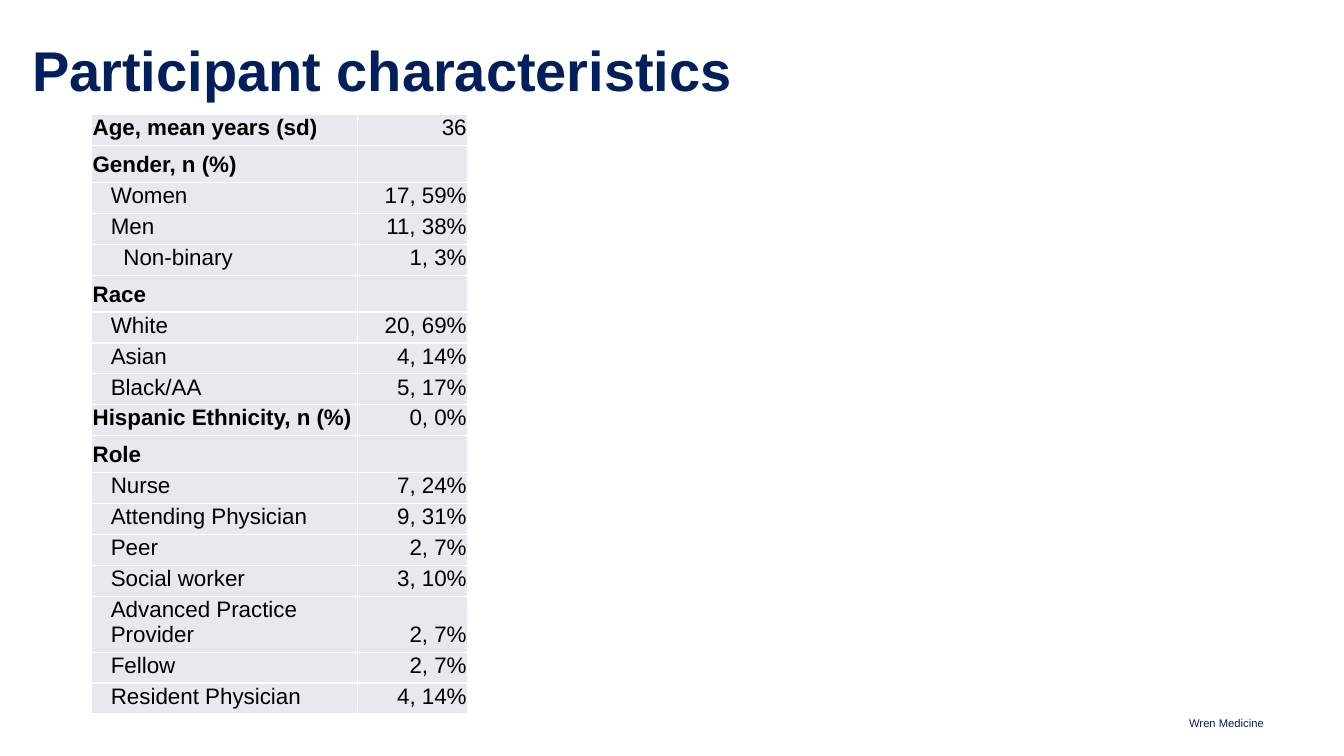
"""Build the participant characteristics slide with its table of demographics."""
from dataclasses import dataclass

from pptx import Presentation
from pptx.dml.color import RGBColor as RGB
from pptx.enum.text import MSO_ANCHOR as ANCHOR, PP_ALIGN as ALIGN
from pptx.util import Pt


@dataclass(frozen=True)
class Theme:
    font: str = "Arial"
    navy: RGB = RGB(0x01, 0x1F, 0x5B)
    text: RGB = RGB(0, 0, 0)
    cell: RGB = RGB(0xE7, 0xE9, 0xEF)
    title_size: int = 40
    table_size: int = 16
    footer_size: int = 8


def set_margins(box, left, top, right, bottom):
    box.margin_left, box.margin_top = Pt(left), Pt(top)
    box.margin_right, box.margin_bottom = Pt(right), Pt(bottom)


def style_text(p, size, color, bold=False, align=ALIGN.LEFT):
    p.alignment = align
    for r in p.runs:
        r.font.name = theme.font
        r.font.size = Pt(size)
        r.font.bold = bold
        r.font.color.rgb = color


theme = Theme()
HEADING, ITEM, SUBITEM = 0.7, 13.7, 22.7
ROW, HEADING_ROW, TWO_LINE_ROW = 22.1, 24, 40
characteristics = [
    ("Age, mean years (sd)", "36", HEADING, ROW),
    ("Gender, n (%)", "", HEADING, HEADING_ROW),
    ("Women", "17, 59%", ITEM, ROW),
    ("Men", "11, 38%", ITEM, ROW),
    ("Non-binary", "1, 3%", SUBITEM, ROW),
    ("Race", "", HEADING, HEADING_ROW),
    ("White", "20, 69%", ITEM, ROW),
    ("Asian", "4, 14%", ITEM, ROW),
    ("Black/AA", "5, 17%", ITEM, ROW),
    ("Hispanic Ethnicity, n (%)", "0, 0%", HEADING, ROW),
    ("Role", "", HEADING, HEADING_ROW),
    ("Nurse", "7, 24%", ITEM, ROW),
    ("Attending Physician", "9, 31%", ITEM, ROW),
    ("Peer", "2, 7%", ITEM, ROW),
    ("Social worker", "3, 10%", ITEM, ROW),
    ("Advanced Practice Provider", "2, 7%", ITEM, TWO_LINE_ROW),
    ("Fellow", "2, 7%", ITEM, ROW),
    ("Resident Physician", "4, 14%", ITEM, ROW),
]

prs = Presentation()
prs.slide_width, prs.slide_height = Pt(960), Pt(540)
slide = prs.slides.add_slide(prs.slide_layouts[5])

title = slide.shapes.title
title.left, title.top, title.width, title.height = Pt(23), Pt(31), Pt(846.7), Pt(71.3)
tf = title.text_frame
tf.text = "Participant characteristics"
tf.vertical_anchor = ANCHOR.TOP
set_margins(tf, 0, 0, 0, 0)
tf.paragraphs[0].line_spacing = 0.9
style_text(tf.paragraphs[0], theme.title_size, theme.navy, bold=True)

table_height = sum(height for *_, height in characteristics)
table = slide.shapes.add_table(
    len(characteristics), 2, Pt(65.5), Pt(82), Pt(268.5), Pt(table_height)).table
table.first_row = table.horz_banding = False
table.columns[0].width, table.columns[1].width = Pt(190), Pt(78.5)

for row, (label, value, indent, height) in zip(table.rows, characteristics):
    row.height = Pt(height)
    columns = [(label, indent, indent == HEADING, ALIGN.LEFT),
               (value, HEADING, False, ALIGN.RIGHT)]
    for cell, (text, left, bold, align) in zip(row.cells, columns):
        cell.fill.solid()
        cell.fill.fore_color.rgb = theme.cell
        cell.vertical_anchor = ANCHOR.BOTTOM
        set_margins(cell, left, 0.7, 0.7, 3.6)
        cell.text_frame.text = text
        style_text(cell.text_frame.paragraphs[0], theme.table_size, theme.text, bold, align)

footer = slide.shapes.add_textbox(Pt(712.8), Pt(506.9), Pt(190), Pt(14.4))
tf = footer.text_frame
tf.word_wrap = True
tf.vertical_anchor = ANCHOR.BOTTOM
set_margins(tf, 0, 0, 0, 0)
tf.text = "Wren Medicine"
style_text(tf.paragraphs[0], theme.footer_size, theme.navy, align=ALIGN.RIGHT)

prs.save("out.pptx")
